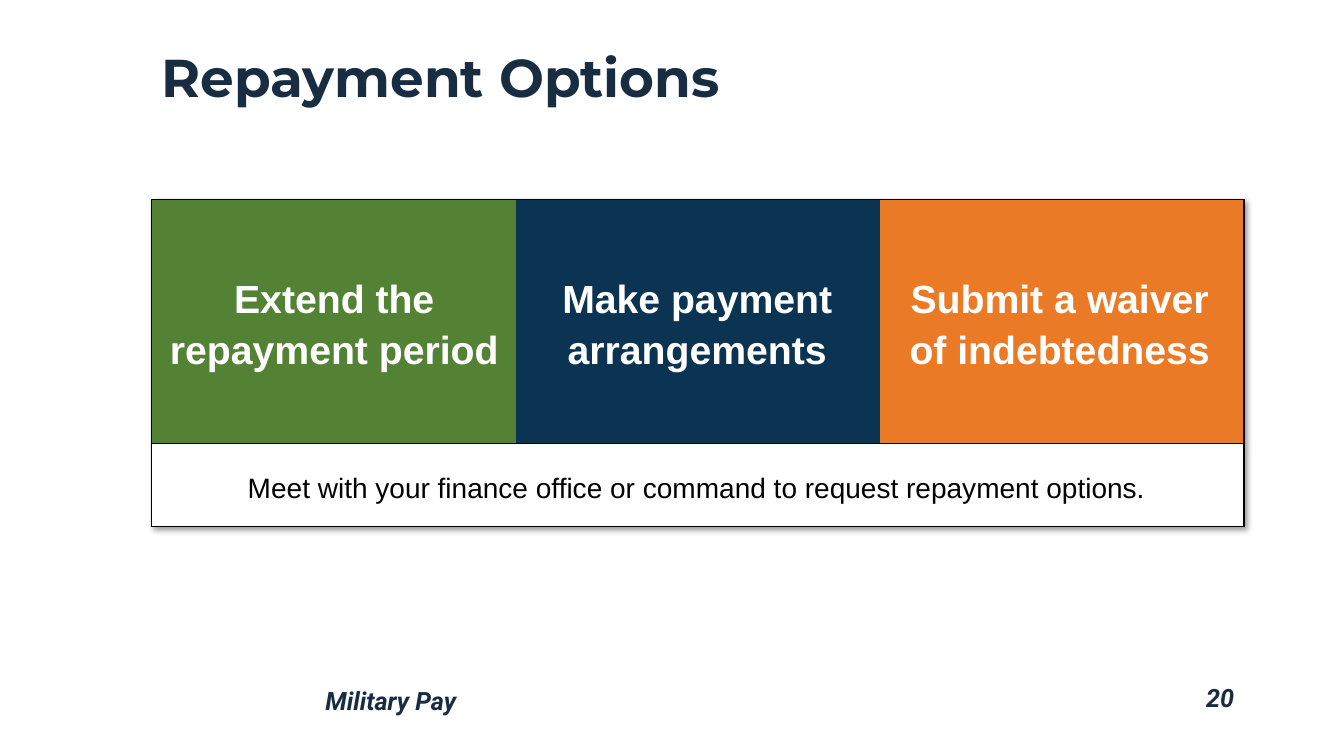
from pptx import Presentation
from pptx.dml.color import RGBColor
from pptx.enum import text as t
from pptx.oxml import parse_xml
from pptx.oxml.ns import nsdecls, qn
from pptx.util import Inches, Pt

HUES = {"ink": "182C42", "green": "548235", "navy": "0B3352",
        "orange": "EA7A26", "white": "FFFFFF", "black": "000000"}
CHOICES = [("Extend the repayment period", "green", 3.63),
           ("Make payment arrangements", "navy", 3.57),
           ("Submit a waiver of indebtedness", "orange", 3.62)]
NOTE = "Meet with your finance office or command to request repayment options."
PLAIN = "{2D5ABB26-0587-4C30-8999-92F81FD0307C}"


def style(frame, words, face, size, hue, align, lead, bold=True, slant=False):
    """Write one paragraph and set its font."""
    frame.word_wrap = True
    para = frame.paragraphs[0]
    para.text = words
    para.alignment, para.line_spacing = align, lead
    font = para.font
    font.name, font.size = face, Pt(size)
    font.bold, font.italic = bold, slant
    font.color.rgb = RGBColor.from_string(HUES[hue])


def add_title(slide, x, y, w, h):
    """Place the slide title in its box."""
    title = slide.shapes.title
    title.left, title.top, title.width, title.height = map(Inches, (x, y, w, h))
    frame = title.text_frame
    frame.auto_size = t.MSO_AUTO_SIZE.NONE
    frame.vertical_anchor = t.MSO_ANCHOR.BOTTOM
    style(frame, "Repayment Options", "Montserrat", 38, "ink", t.PP_ALIGN.LEFT, 0.9)


def paint(cell, hue, sides):
    """Fill a cell and draw black borders on the named sides."""
    cell.fill.solid()
    cell.fill.fore_color.rgb = RGBColor.from_string(HUES[hue])
    props = cell._tc.get_or_add_tcPr()
    for spot, side in enumerate(sides):
        props.insert(spot, parse_xml(
            f'<a:ln{side} {nsdecls("a")} w="12700"><a:solidFill>'
            f'<a:srgbClr val="{HUES["black"]}"/></a:solidFill></a:ln{side}>'))


def add_shade(table):
    """Give the table a soft shadow and no style of its own."""
    props = table._tbl.tblPr
    props.find(qn("a:tableStyleId")).text = PLAIN
    props.insert(0, parse_xml(
        f'<a:effectLst {nsdecls("a")}><a:outerShdw blurRad="50800" dist="38100" '
        f'dir="2700000" algn="tl" rotWithShape="0"><a:srgbClr val="{HUES["black"]}">'
        '<a:alpha val="40000"/></a:srgbClr></a:outerShdw></a:effectLst>'))


def add_grid(slide, x, y, w, h, note_h):
    """Build the coloured table with a merged bottom row."""
    count = len(CHOICES)
    table = slide.shapes.add_table(2, count, *map(Inches, (x, y, w, h))).table
    table.first_row = table.horz_banding = False
    add_shade(table)
    table.rows[0].height, table.rows[1].height = Inches(h - note_h), Inches(note_h)
    for col, (_, hue, _) in enumerate(CHOICES):
        table.columns[col].width = Inches(w / count)
        ends = ["L"] * (col == 0) + ["R"] * (col == count - 1)
        paint(table.cell(0, col), hue, ends + ["T", "B"])
        paint(table.cell(1, col), "white", "LRTB")
    table.cell(1, 0).merge(table.cell(1, count - 1))


def add_label(slide, x, y, w, h, words, size, hue, bold):
    """Place centred text in the middle of its box."""
    frame = slide.shapes.add_textbox(*map(Inches, (x, y, w, h))).text_frame
    frame.vertical_anchor = t.MSO_ANCHOR.MIDDLE
    style(frame, words, "Arial", size, hue, t.PP_ALIGN.CENTER, 1.08, bold)


def add_options(slide, x, y, w, h):
    """Lay the choices and the note over their table."""
    note_h = 0.82
    add_grid(slide, x, y, w, h, note_h)
    left = x
    for words, _, wide in CHOICES:
        add_label(slide, left, y, wide, h - note_h, words, 28, "white", True)
        left += wide
    add_label(slide, x, y + h - 0.8, left - x, 0.8, NOTE, 20, "black", False)


def add_foot(slide, x, y, w, h):
    """Place the course name and the page number."""
    page_w = 1.58
    name_w = w - page_w
    parts = [("Military Pay", x, y + 0.03, name_w, t.PP_ALIGN.LEFT),
             ("20", x + name_w, y, page_w, t.PP_ALIGN.RIGHT)]
    for words, left, top, wide, align in parts:
        box = slide.shapes.add_textbox(*map(Inches, (left, top, wide, h)))
        style(box.text_frame, words, "Roboto", 18, "ink", align, 0.9, slant=True)


def main():
    """Build and save the slide."""
    deck = Presentation()
    deck.slide_width, deck.slide_height = Inches(13.33), Inches(7.5)
    slide = deck.slides.add_slide(deck.slide_layouts[5])
    add_title(slide, 1.5, 0.11, 10.84, 1.02)
    add_options(slide, 1.5, 1.98, 10.84, 3.24)
    add_foot(slide, 3.13, 6.75, 9.21, 0.38)
    deck.save("out.pptx")


if __name__ == "__main__":
    main()
